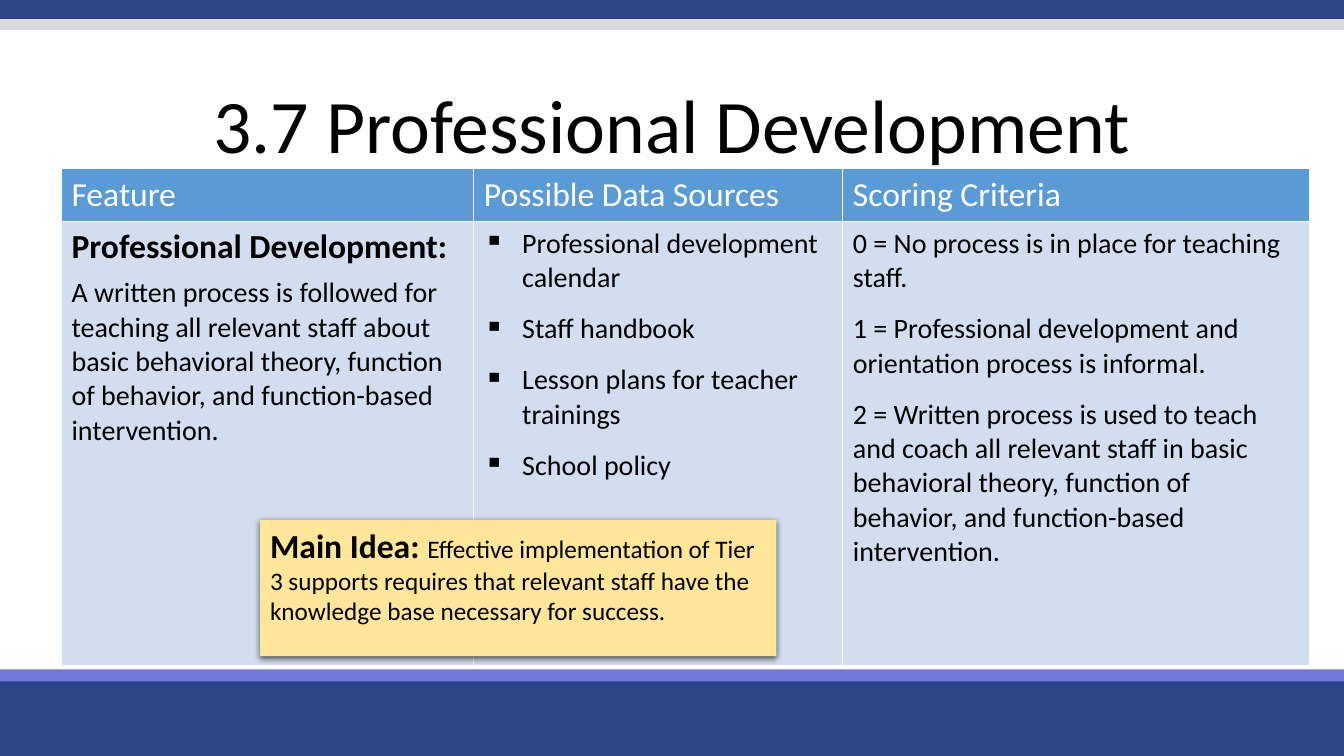
from lxml import etree
from pptx import Presentation
from pptx import util as u
from pptx.dml.color import RGBColor
from pptx.enum import shapes, text
from pptx.oxml import ns

COLORS = {
    "navy": "2E4488", "violet": "7476DA", "silver": "D9D9D9",
    "header": "5B9BD5", "body": "D2DEEF", "note": "FFE699",
    "black": "000000", "white": "FFFFFF",
}
BANDS = [
    (6.7, 0.8, "navy"), (6.64, 0.12, "violet"),
    (-0.03, 0.22, "navy"), (0.19, 0.11, "silver"),
]
HEADINGS = ["Feature", "Possible Data Sources", "Scoring Criteria"]
FEATURE = (
    "A written process is followed for teaching all relevant staff about basic "
    "behavioral theory, function of behavior, and function-based intervention."
)
SOURCES = [
    "Professional development calendar", "Staff handbook",
    "Lesson plans for teacher trainings", "School policy",
]
CRITERIA = [
    "0 = No process is in place for teaching staff.",
    "1 = Professional development and orientation process is informal.",
    "2 = Written process is used to teach and coach all relevant staff in basic "
    "behavioral theory, function of behavior, and function-based intervention.",
]
MAIN_IDEA = (
    "Effective implementation of Tier 3 supports requires that relevant staff "
    "have the knowledge base necessary for success."
)


def color(name):
    return RGBColor.from_string(COLORS[name])


def paint(target, name):
    target.fill.solid()
    target.fill.fore_color.rgb = color(name)


def add_element(parent, tag, **attributes):
    return etree.SubElement(parent, ns.qn(tag), attributes)


def add_span(para, words, size=20, bold=False, ink="black"):
    span = para.add_run()
    span.text = words
    span.font.name = "Calibri"
    span.font.size = u.Pt(size)
    span.font.bold = bold
    span.font.color.rgb = color(ink)


def add_bullet(para):
    properties = para._p.get_or_add_pPr()
    indent = u.Inches(0.38)
    properties.set("marL", str(indent))
    properties.set("indent", str(-indent))
    add_element(properties, "a:buChar", char="▪")


def fill_list(frame, lines, bulleted=False):
    for index, line in enumerate(lines):
        para = frame.paragraphs[0] if index == 0 else frame.add_paragraph()
        if bulleted:
            add_bullet(para)
        para.space_after = u.Pt(12)
        add_span(para, line)


def add_rectangle(page, left, top, width, height, fill):
    box = page.shapes.add_shape(
        shapes.MSO_SHAPE.RECTANGLE,
        u.Inches(left), u.Inches(top), u.Inches(width), u.Inches(height))
    box.shadow.inherit = False
    box.line.fill.background()
    paint(box, fill)
    return box


def add_bands(page, width):
    for top, height, fill in BANDS:
        add_rectangle(page, 0, top, width, height, fill)


def add_title(page, left, top, width, height):
    title = page.shapes.title
    title.left, title.top = u.Inches(left), u.Inches(top)
    title.width, title.height = u.Inches(width), u.Inches(height)
    frame = title.text_frame
    frame.auto_size = text.MSO_AUTO_SIZE.NONE
    frame.vertical_anchor = text.MSO_ANCHOR.MIDDLE
    para = frame.paragraphs[0]
    para.alignment = text.PP_ALIGN.CENTER
    para.line_spacing = 0.9
    add_span(para, "3.7 Professional Development", size=54)


def add_borders(cell):
    properties = cell._tc.get_or_add_tcPr()
    for index, side in enumerate(["a:lnL", "a:lnR", "a:lnT", "a:lnB"]):
        line = add_element(properties, side, w=str(u.Pt(1)))
        add_element(add_element(line, "a:solidFill"), "a:srgbClr", val=COLORS["white"])
        properties.insert(index, line)


def add_criteria_table(page, left, top, widths, heights):
    table = page.shapes.add_table(
        len(heights), len(widths), u.Inches(left), u.Inches(top),
        u.Inches(sum(widths)), u.Inches(sum(heights))).table
    for column, width in zip(table.columns, widths):
        column.width = u.Inches(width)
    for row, height, fill in zip(table.rows, heights, ["header", "body"]):
        row.height = u.Inches(height)
        for cell in row.cells:
            paint(cell, fill)
            add_borders(cell)
    for cell, heading in zip(table.rows[0].cells, HEADINGS):
        cell.vertical_anchor = text.MSO_ANCHOR.MIDDLE
        add_span(cell.text_frame.paragraphs[0], heading, size=24, ink="white")
    feature, sources, criteria = [cell.text_frame for cell in table.rows[1].cells]
    add_span(feature.paragraphs[0], "Professional Development:", size=24, bold=True)
    para = feature.add_paragraph()
    para.space_before = u.Pt(6)
    add_span(para, FEATURE)
    fill_list(sources, SOURCES, bulleted=True)
    fill_list(criteria, CRITERIA)


def add_main_idea(page, left, top, width, height):
    box = add_rectangle(page, left, top, width, height, "note")
    effects = box._element.spPr.find(ns.qn("a:effectLst"))
    shadow = add_element(
        effects, "a:outerShdw", blurRad=str(u.Pt(4.5)), dist=str(u.Pt(1.5)),
        dir="5400000", algn="ctr", rotWithShape="0")
    shade = add_element(shadow, "a:srgbClr", val=COLORS["black"])
    add_element(shade, "a:alpha", val="63000")
    frame = box.text_frame
    frame.word_wrap = True
    frame.vertical_anchor = text.MSO_ANCHOR.TOP
    para = frame.paragraphs[0]
    para.alignment = text.PP_ALIGN.LEFT
    add_span(para, "Main Idea: ", size=24, bold=True)
    add_span(para, MAIN_IDEA, size=18)


def main():
    deck = Presentation()
    deck.slide_width, deck.slide_height = u.Inches(13.33), u.Inches(7.5)
    page = deck.slides.add_slide(deck.slide_layouts.get_by_name("Title Only"))
    add_bands(page, 13.33)
    add_title(page, 0, 0.69, 13.33, 1.18)
    add_criteria_table(page, 0.61, 1.67, [4.09, 3.66, 4.63], [0.53, 4.4])
    add_main_idea(page, 2.58, 5.16, 5.12, 1.35)
    deck.save("out.pptx")


if __name__ == "__main__":
    main()
